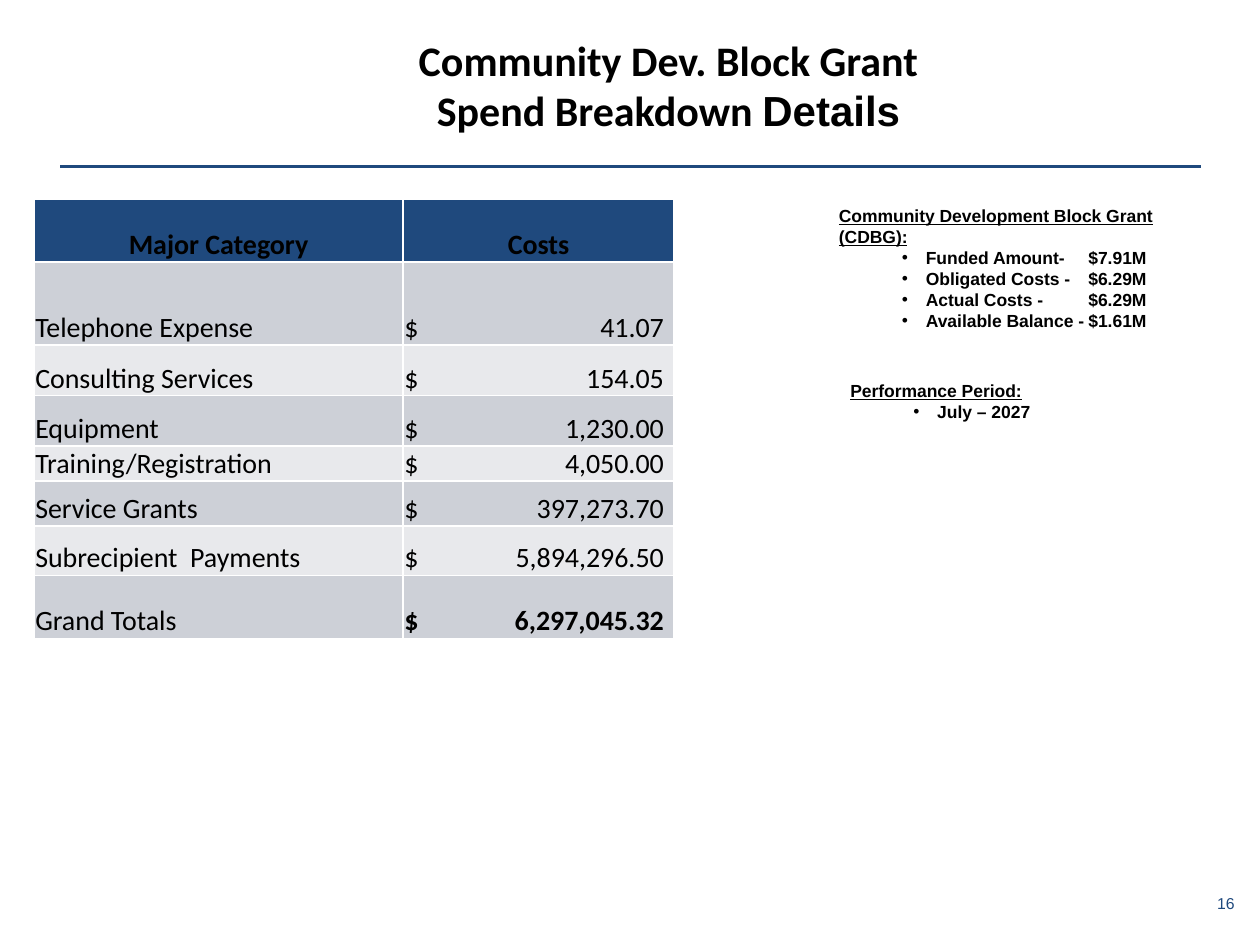
from pptx import Presentation
from pptx.dml.color import RGBColor
from pptx.enum import shapes, text
from pptx.oxml import parse_xml
from pptx.oxml.ns import nsdecls
from pptx.util import Inches, Pt

HUES = {"navy": "1F497D", "black": "000000", "dark": "CDD0D7", "light": "E8E9EC"}
COSTS = [
    ("Telephone Expense", "41.07"),
    ("Consulting Services", "154.05"),
    ("Equipment", "1,230.00"),
    ("Training/Registration", "4,050.00"),
    ("Service Grants", "397,273.70"),
    ("Subrecipient  Payments", "5,894,296.50"),
    ("Grand Totals", "6,297,045.32"),
]
WIDTHS = [2.93, 2.15]
HEIGHTS = [0.5, 0.66, 0.4, 0.4, 0.26, 0.36, 0.39, 0.5]
FUNDS = [
    "Funded Amount-\t$7.91M",
    "Obligated Costs -\t$6.29M",
    "Actual Costs -\t$6.29M",
    "Available Balance -\t$1.61M",
]


def hue(name):
    return RGBColor.from_string(HUES[name])


def style(run, size, face="Arial", bold=False, line=False, color="black"):
    font = run.font
    font.size = Pt(size)
    font.name = face
    font.bold = bold
    font.underline = line
    font.color.rgb = hue(color)


def add_tab(para, pos, side):
    para._p.get_or_add_pPr().append(parse_xml(
        f'<a:tabLst {nsdecls("a")}><a:tab pos="{Inches(pos)}" algn="{side}"/></a:tabLst>'))


def add_bullet(para):
    props = para._p.get_or_add_pPr()
    props.set("marL", str(Inches(0.69)))
    props.set("indent", str(Inches(-0.19)))
    props.append(parse_xml(f'<a:buFont {nsdecls("a")} typeface="Arial"/>'))
    props.append(parse_xml(f'<a:buChar {nsdecls("a")} char="•"/>'))


def add_title(slide):
    title = slide.shapes.title
    title.left, title.top = Inches(1.24), Inches(0.15)
    title.width, title.height = Inches(8.08), Inches(1.04)
    frame = title.text_frame
    frame.margin_left = Inches(0.15)
    frame.vertical_anchor = text.MSO_ANCHOR.MIDDLE
    frame.auto_size = text.MSO_AUTO_SIZE.NONE
    frame.text = "Community Dev. Block Grant\vSpend Breakdown "
    para = frame.paragraphs[0]
    para.alignment = text.PP_ALIGN.CENTER
    para.add_run().text = "Details"
    for run in para.runs:
        style(run, 24, "Calibri", True)
    para.runs[-1].font.name = "Arial"


def add_rule(slide):
    rule = slide.shapes.add_connector(
        shapes.MSO_CONNECTOR.STRAIGHT, Inches(0.48), Inches(1.32), Inches(9.53), Inches(1.32))
    rule.line.color.rgb = hue("navy")
    rule.line.width = Pt(1.5)
    rule._element.spPr.append(parse_xml(f'<a:effectLst {nsdecls("a")}/>'))


def fill_cell(cell, words, fill, bold=False, center=False):
    cell.fill.solid()
    cell.fill.fore_color.rgb = hue(fill)
    cell.vertical_anchor = text.MSO_ANCHOR.BOTTOM
    cell.margin_left = cell.margin_right = cell.margin_top = Inches(0.01)
    cell.margin_bottom = 0
    para = cell.text_frame.paragraphs[0]
    para.text = words
    para.alignment = text.PP_ALIGN.CENTER if center else text.PP_ALIGN.LEFT
    if "\t" in words:
        add_tab(para, 2.06, "r")
    style(para.runs[0], 16, "Calibri", bold)


def add_costs(slide):
    table = slide.shapes.add_table(
        len(HEIGHTS), len(WIDTHS), Inches(0.27), Inches(1.58),
        Inches(sum(WIDTHS)), Inches(sum(HEIGHTS))).table
    for col, width in zip(table.columns, WIDTHS):
        col.width = Inches(width)
    for row, height in zip(table.rows, HEIGHTS):
        row.height = Inches(height)
    for col, head in enumerate(["Major Category", "Costs"]):
        fill_cell(table.cell(0, col), head, "navy", True, True)
    for row, (name, cost) in enumerate(COSTS, 1):
        fill = "dark" if row % 2 else "light"
        fill_cell(table.cell(row, 0), name, fill)
        fill_cell(table.cell(row, 1), f"$\t{cost}", fill, row == len(COSTS))


def add_list(slide, left, top, width, height, head, items):
    frame = slide.shapes.add_textbox(
        Inches(left), Inches(top), Inches(width), Inches(height)).text_frame
    frame.word_wrap = True
    frame.text = head
    style(frame.paragraphs[0].runs[0], 10, bold=True, line=True)
    for item in items:
        para = frame.add_paragraph()
        para.text = item
        para.level = 1
        add_bullet(para)
        if "\t" in item:
            add_tab(para, 1.98, "l")
        style(para.runs[0], 10, bold=True)


def add_number(slide):
    frame = slide.shapes.add_textbox(
        Inches(9.57), Inches(7.05), Inches(0.33), Inches(0.24)).text_frame
    frame.margin_left = frame.margin_right = Inches(0.09)
    frame.margin_top = frame.margin_bottom = Inches(0.04)
    frame.word_wrap = False
    frame.text = "16"
    style(frame.paragraphs[0].runs[0], 9, color="navy")


def main():
    deck = Presentation()
    deck.slide_width, deck.slide_height = Inches(10), Inches(7.5)
    slide = deck.slides.add_slide(deck.slide_layouts[5])
    add_rule(slide)
    add_number(slide)
    add_title(slide)
    add_list(slide, 6.56, 1.58, 3.27, 1.45,
             "Community Development Block Grant (CDBG):", FUNDS)
    add_costs(slide)
    add_list(slide, 6.65, 2.97, 3.17, 0.61, "Performance Period:", ["July – 2027"])
    deck.save("out.pptx")


if __name__ == "__main__":
    main()
